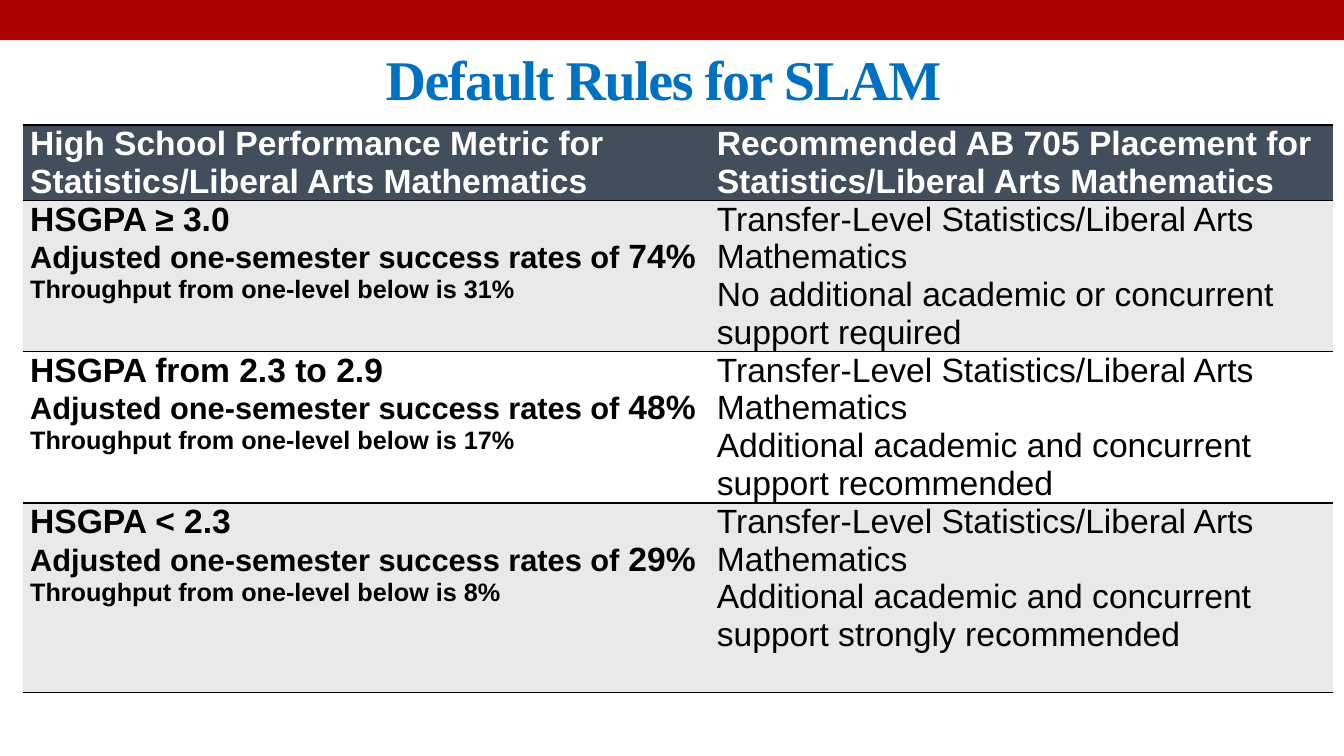
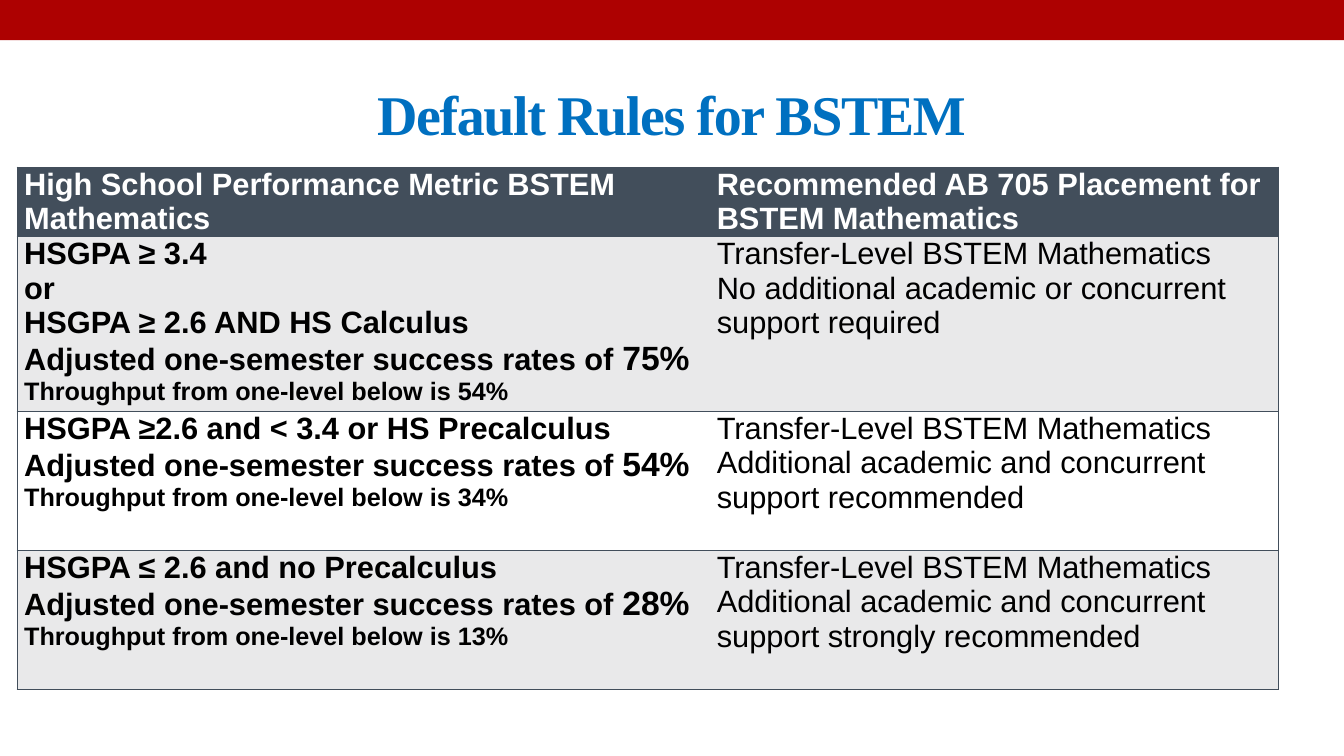
from lxml.etree import SubElement
from pptx import Presentation
from pptx.dml.color import RGBColor
from pptx.enum.shapes import MSO_SHAPE as Shape
from pptx.enum.text import MSO_ANCHOR as Anchor, PP_ALIGN as Align
from pptx.oxml.ns import qn
from pptx.util import Inches, Pt

COLORS = {
    "band": "AD0101", "title": "0070C0", "header": "424E5B", "shade": "E9E9EA",
    "white": "FFFFFF", "black": "000000",
}
RATE_LEAD = "Adjusted one-semester success rates of "
THROUGHPUT_LEAD = "Throughput from one-level below is "
RATE_LEAD_SIZE, RATE_SIZE, THROUGHPUT_SIZE = 22, 24, 18
LINE_RATIO = 1.12
SUPPORT = [
    "No additional academic or concurrent support required",
    "Additional academic and concurrent support recommended",
    "Additional academic and concurrent support strongly recommended",
]

SLIDES = [
    {
        "title": "Default Rules for SLAM",
        "title_at": (0.58, 0.31, 12, 0.92),
        "table_at": (0.23, 1.24),
        "columns": (6.81, 6.18),
        "rows": (0.75, 1.5, 1.5, 1.88),
        "size": 24,
        "border": "black",
        "outer_sides": False,
        "headers": (
            "High School Performance Metric for Statistics/Liberal Arts Mathematics",
            "Recommended AB 705 Placement for Statistics/Liberal Arts Mathematics",
        ),
        "placement": "Transfer-Level Statistics/Liberal Arts Mathematics",
        "rules": [
            (["HSGPA ≥ 3.0"], "74%", "31%"),
            (["HSGPA from 2.3 to 2.9"], "48%", "17%"),
            (["HSGPA < 2.3"], "29%", "8%"),
        ],
    },
    {
        "title": "Default Rules for BSTEM",
        "title_at": (0.66, 0.58, 12, 1.08),
        "table_at": (0.17, 1.66),
        "columns": (6.87, 5.64),
        "rows": (0.69, 1.73, 1.38, 1.38),
        "size": 22,
        "border": "header",
        "outer_sides": True,
        "headers": (
            "High School Performance Metric BSTEM Mathematics",
            "Recommended AB 705 Placement for BSTEM Mathematics",
        ),
        "placement": "Transfer-Level BSTEM Mathematics",
        "rules": [
            (["HSGPA ≥ 3.4", "or", "HSGPA ≥ 2.6 AND HS Calculus"], "75%", "54%"),
            (["HSGPA ≥2.6 and < 3.4 or HS Precalculus"], "54%", "34%"),
            (["HSGPA ≤ 2.6 and no Precalculus"], "28%", "13%"),
        ],
    },
]


def color(name):
    return RGBColor.from_string(COLORS[name])


def style_font(font, name, size, color_name, bold):
    font.name = name
    font.size = Pt(size)
    font.bold = bold
    font.color.rgb = color(color_name)


def add_band(page, width):
    band = page.shapes.add_shape(Shape.RECTANGLE, 0, 0, width, Inches(0.4))
    band.shadow.inherit = False
    band.fill.solid()
    band.fill.fore_color.rgb = color("band")
    band.line.fill.background()


def add_title(page, text, place):
    box = page.shapes.add_textbox(*map(Inches, place))
    frame = box.text_frame
    frame.word_wrap = True
    frame.vertical_anchor = Anchor.MIDDLE
    para = frame.paragraphs[0]
    para.alignment = Align.CENTER
    span = para.add_run()
    span.text = text
    style_font(span.font, "Times New Roman", 40, "title", True)
    span.font._element.set("spc", "-100")


def set_borders(cell, color_name, sides):
    properties = cell._tc.get_or_add_tcPr()
    for index, side in enumerate("LRTB"):
        line = SubElement(properties, qn(f"a:ln{side}"), w=str(Pt(1)))
        if side in sides:
            fill = SubElement(line, qn("a:solidFill"))
            SubElement(fill, qn("a:srgbClr"), val=COLORS[color_name])
        else:
            SubElement(line, qn("a:noFill"))
        properties.insert(index, line)


def fill_cell(cell, lines, fill_name, text_color, bold):
    cell.margin_left = cell.margin_right = Inches(0.07)
    cell.margin_top = cell.margin_bottom = 0
    cell.fill.solid()
    cell.fill.fore_color.rgb = color(fill_name)
    frame = cell.text_frame
    for index, spans in enumerate(lines):
        para = frame.add_paragraph() if index else frame.paragraphs[0]
        para.line_spacing = Pt(LINE_RATIO * max(size for _, size in spans))
        style_font(para.font, "Arial", spans[0][1], text_color, bold)
        for text, size in spans:
            span = para.add_run()
            span.text = text
            if size != spans[0][1]:
                span.font.size = Pt(size)


def metric_lines(criteria, rate, throughput, size):
    return [[(text, size)] for text in criteria] + [
        [(RATE_LEAD, RATE_LEAD_SIZE), (rate, RATE_SIZE)],
        [(THROUGHPUT_LEAD + throughput, THROUGHPUT_SIZE)],
    ]


def add_rules_table(page, content):
    columns, rows, size = content["columns"], content["rows"], content["size"]
    place = (*content["table_at"], sum(columns), sum(rows))
    table = page.shapes.add_table(len(rows), len(columns), *map(Inches, place)).table
    table.first_row = table.horz_banding = False
    for column, width in zip(table.columns, columns):
        column.width = Inches(width)
    for row, height in zip(table.rows, rows):
        row.height = Inches(height)

    for cell, text in zip(table.rows[0].cells, content["headers"]):
        fill_cell(cell, [[(text, size)]], "header", "white", True)
    for number, (rule, support) in enumerate(zip(content["rules"], SUPPORT), 1):
        fill_name = "shade" if number % 2 else "white"
        metric, placement = table.rows[number].cells
        fill_cell(metric, metric_lines(*rule, size), fill_name, "black", True)
        advice = [[(text, size)] for text in (content["placement"], support)]
        fill_cell(placement, advice, fill_name, "black", False)

    for row in table.rows:
        for cell, outer in zip(row.cells, "LR"):
            sides = "TB" + (outer if content["outer_sides"] else "")
            set_borders(cell, content["border"], sides)


def main():
    deck = Presentation()
    deck.slide_width, deck.slide_height = Inches(13.33), Inches(7.5)
    for content in SLIDES:
        page = deck.slides.add_slide(deck.slide_layouts[6])
        add_band(page, deck.slide_width)
        add_title(page, content["title"], content["title_at"])
        add_rules_table(page, content)
    deck.save("out.pptx")


if __name__ == "__main__":
    main()
